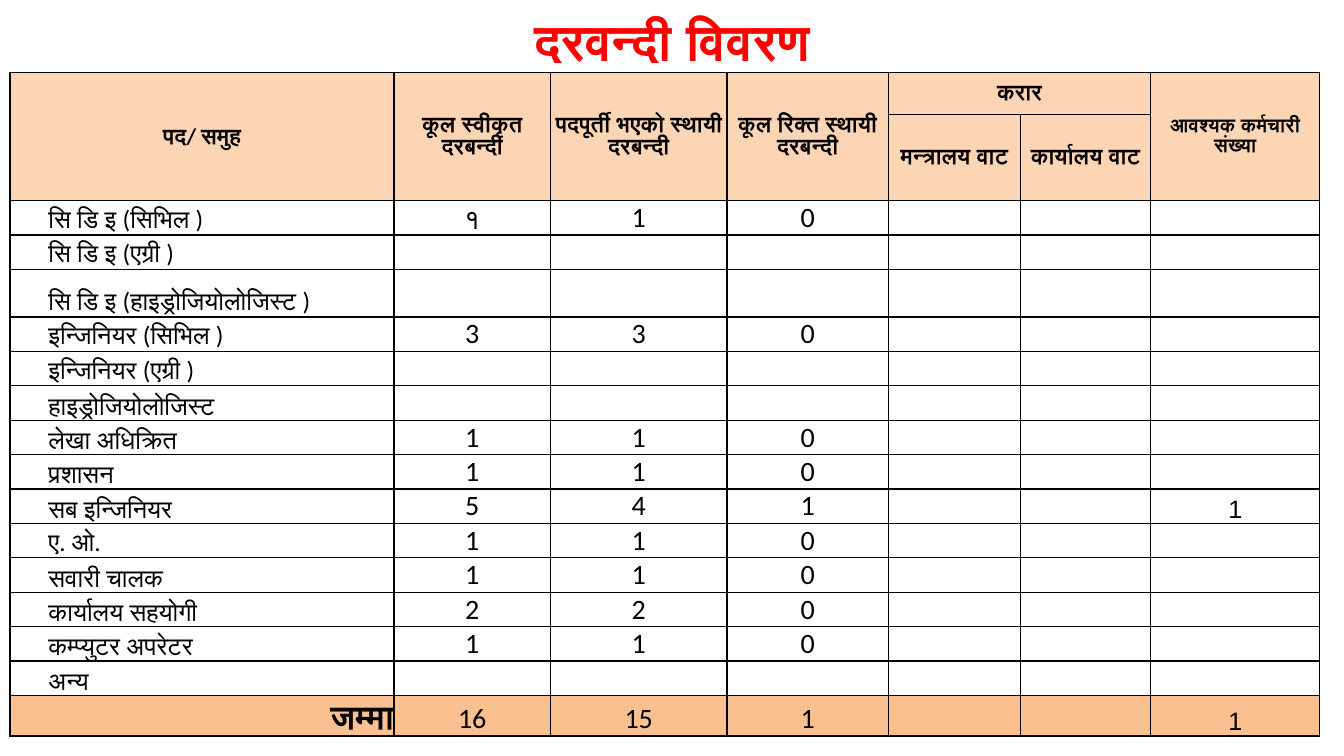
from dataclasses import dataclass

from lxml.etree import SubElement
from pptx import Presentation
from pptx.dml.color import RGBColor
from pptx.enum.text import MSO_ANCHOR as Anchor, PP_ALIGN as Align
from pptx.oxml.ns import qn
from pptx.util import Pt

PEACH, ORANGE, WHITE = "FCD5B5", "FAC090", "FFFFFF"
BLACK, RED = "000000", "FF0000"
WIDTHS = [274.2, 111.9, 126, 115.2, 94.3, 93.3, 120.6]
TOP, SUB, ROW, TALL, LAST = 30.3, 61.2, 24.6, 34, 29


@dataclass
class Style:
    size: float
    bold: bool = False
    align: Align = Align.CENTER
    anchor: Anchor = Anchor.BOTTOM
    indent: float = 0
    font: str = "Calibri"
    color: str = BLACK


@dataclass
class Head:
    text: str
    row: int
    col: int
    rows: int = 1
    cols: int = 1
    size: float = 16


@dataclass
class Post:
    name: str
    counts: tuple[str, ...] = ()
    need: str = ""
    height: float = ROW


TITLE = Style(36, True, anchor=Anchor.MIDDLE, color=RED)
LABEL = Style(18, align=Align.LEFT, indent=27.4)
TOTAL = Style(24, True, Align.RIGHT, indent=27.4)
COUNT = Style(20)
NEED = Style(18, font="Arial")

HEADS = [
    Head("पद/ समुह", 0, 0, rows=2),
    Head("कूल स्वीकृत दरबन्दी", 0, 1, rows=2),
    Head("पदपूर्ती भएको स्थायी दरबन्दी", 0, 2, rows=2),
    Head("कूल रिक्त स्थायी दरबन्दी", 0, 3, rows=2),
    Head("करार", 0, 4, cols=2),
    Head("आवश्यक कर्मचारी संख्या", 0, 6, rows=2, size=14),
    Head("मन्त्रालय वाट", 1, 4),
    Head("कार्यालय वाट", 1, 5),
]
POSTS = [
    Post("सि डि इ (सिभिल )", ("१", "1", "0")),
    Post("सि डि इ (एग्री )"),
    Post("सि डि इ (हाइड्रोजियोलोजिस्ट )", height=TALL),
    Post("इन्जिनियर (सिभिल )", ("3", "3", "0")),
    Post("इन्जिनियर (एग्री )"),
    Post("हाइड्रोजियोलोजिस्ट"),
    Post("लेखा अधिक्रित", ("1", "1", "0")),
    Post("प्रशासन", ("1", "1", "0")),
    Post("सब इन्जिनियर", ("5", "4", "1"), "1"),
    Post("ए. ओ.", ("1", "1", "0")),
    Post("सवारी चालक", ("1", "1", "0")),
    Post("कार्यालय सहयोगी", ("2", "2", "0")),
    Post("कम्प्युटर अपरेटर", ("1", "1", "0")),
    Post("अन्य"),
    Post("जम्मा", ("16", "15", "1"), "1", LAST),
]


def paint(fill, color: str) -> None:
    fill.solid()
    fill.fore_color.rgb = RGBColor.from_string(color)


def write(frame, text: str, style: Style) -> None:
    para = frame.paragraphs[0]
    para.alignment = style.align
    if style.indent:
        props = para._p.get_or_add_pPr()
        props.set("marL", str(Pt(style.indent)))
        props.set("indent", "0")
    run = para.add_run()
    run.text = text
    looks = {"size": Pt(style.size), "bold": style.bold, "name": style.font}
    for key, value in looks.items():
        setattr(run.font, key, value)
    paint(run.font.fill, style.color)


def clear(box) -> None:
    """Take away the inner margins of a cell or text frame."""
    for side in ("left", "right", "top", "bottom"):
        setattr(box, f"margin_{side}", 0)


def frame_cell(cell, color: str) -> None:
    """Give a cell its fill, thin black borders and no margins."""
    clear(cell)
    paint(cell.fill, color)
    props = cell._tc.get_or_add_tcPr()
    for place, side in enumerate("LRTB"):
        line = SubElement(props, qn(f"a:ln{side}"), w=str(Pt(1)))
        fill = SubElement(line, qn("a:solidFill"))
        SubElement(fill, qn("a:srgbClr"), val=BLACK)
        props.insert(place, line)


def put(cell, text: str, style: Style) -> None:
    cell.vertical_anchor = style.anchor
    if text:
        write(cell.text_frame, text, style)


def add_title(slide, text: str) -> None:
    box = slide.shapes.add_textbox(0, Pt(6.5), Pt(960), Pt(45.4))
    frame = box.text_frame
    frame.word_wrap = True
    frame.vertical_anchor = TITLE.anchor
    clear(frame)
    write(frame, text, TITLE)


def add_grid(slide) -> None:
    highs = [TOP, SUB] + [post.height for post in POSTS]
    shape = slide.shapes.add_table(len(highs), len(WIDTHS), Pt(7.2), Pt(51.8),
                                   Pt(sum(WIDTHS)), Pt(sum(highs)))
    table = shape.table
    for col, width in zip(table.columns, WIDTHS):
        col.width = Pt(width)
    for index, (row, high) in enumerate(zip(table.rows, highs)):
        row.height = Pt(high)
        color = PEACH if index < 2 else WHITE
        if index == len(highs) - 1:
            color = ORANGE
        for cell in row.cells:
            frame_cell(cell, color)

    for head in HEADS:
        cell = table.cell(head.row, head.col)
        if head.rows * head.cols > 1:
            end = table.cell(head.row + head.rows - 1, head.col + head.cols - 1)
            cell.merge(end)
        put(cell, head.text, Style(head.size, True, anchor=Anchor.MIDDLE))

    for row, post in enumerate(POSTS, 2):
        put(table.cell(row, 0), post.name, TOTAL if post is POSTS[-1] else LABEL)
        for col, count in enumerate(post.counts, 1):
            put(table.cell(row, col), count, COUNT)
        put(table.cell(row, 6), post.need, NEED)


def main() -> None:
    deck = Presentation()
    deck.slide_width, deck.slide_height = Pt(960), Pt(540)
    slide = deck.slides.add_slide(deck.slide_layouts[6])
    add_title(slide, "दरवन्दी विवरण")
    add_grid(slide)
    deck.save("out.pptx")


if __name__ == "__main__":
    main()
